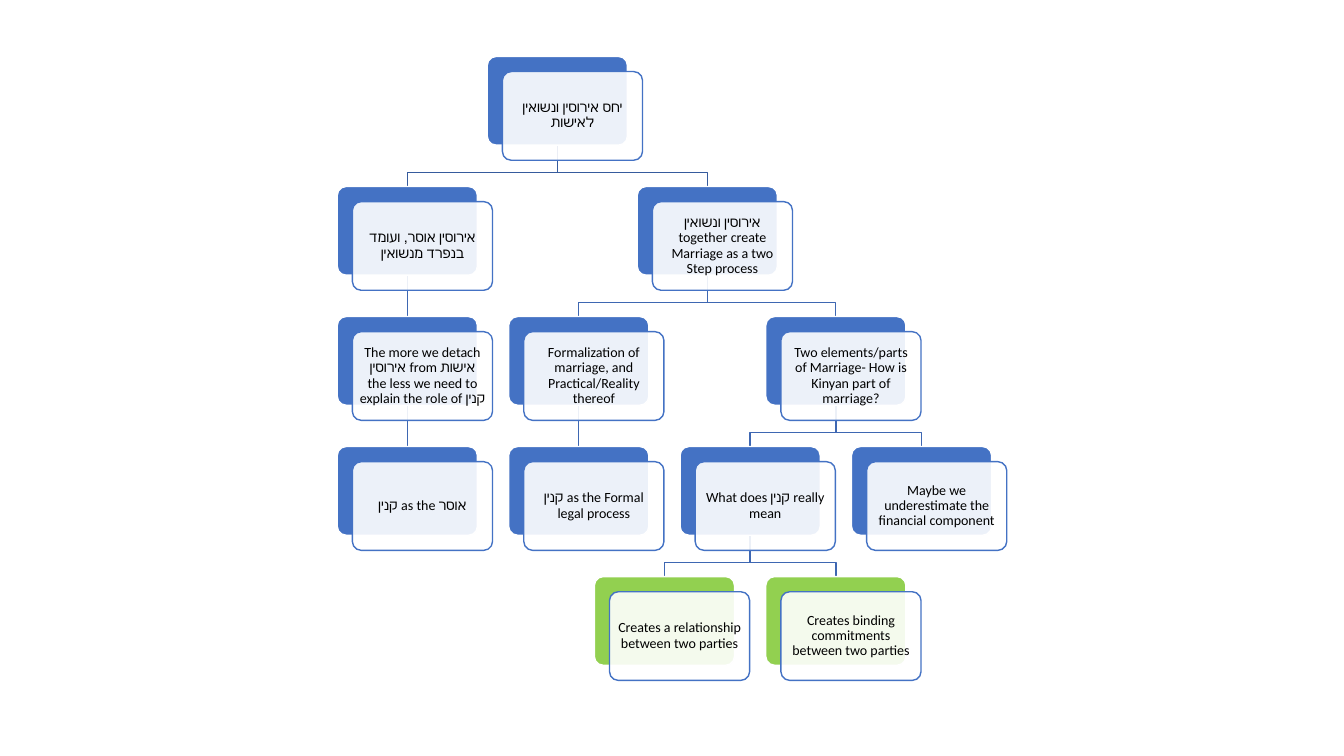
from lxml import etree
from pptx import Presentation
from pptx import util as u
from pptx.dml.color import RGBColor
from pptx.enum import shapes, text
from pptx.oxml.ns import qn

COLORS = {"blue": "4472C4", "green": "92D050", "white": "FFFFFF", "black": "000000",
          "root_line": "365B9D", "branch_line": "3E67B2"}

# key: (parent, column, level, back colour, wording)
NODES = {
    "root": (None, 0.875, 0, "blue", "יחס אירוסין ונשואין לאישות"),
    "separate": ("root", 0, 1, "blue", "אירוסין אוסר, ועומד בנפרד מנשואין"),
    "detach": ("separate", 0, 2, "blue",
               "The more we detach אירוסין from אישות the less we need to explain the role of קנין"),
    "forbids": ("detach", 0, 3, "blue", "קנין as the אוסר"),
    "together": ("root", 1.75, 1, "blue",
                 "אירוסין ונשואין together create Marriage as a two Step process"),
    "formal": ("together", 1, 2, "blue",
               "Formalization of marriage, and Practical/Reality thereof"),
    "legal": ("formal", 1, 3, "blue", "קנין as the Formal legal process"),
    "elements": ("together", 2.5, 2, "blue",
                 "Two elements/parts of Marriage- How is Kinyan part of marriage?"),
    "meaning": ("elements", 2, 3, "blue", "What does קנין really mean"),
    "relationship": ("meaning", 1.5, 4, "green", "Creates a relationship between two parties"),
    "commitments": ("meaning", 2.5, 4, "green",
                    "Creates binding commitments between two parties"),
    "financial": ("elements", 3, 3, "blue", "Maybe we underestimate the financial component"),
}

FIRST_CENTER, COLUMN_STEP = 4.04, 1.7
FIRST_TOP, LEVEL_STEP = 0.56, 1.29
WIDTH, HEIGHT = 1.39, 0.88
CARD_OFFSET = 0.15
ELBOW_DROP = 0.27


def rgb(name):
    return RGBColor.from_string(COLORS[name])


def place(key):
    """Horizontal centre and top of a node, in inches."""
    _, column, level, _, _ = NODES[key]
    return FIRST_CENTER + column * COLUMN_STEP, FIRST_TOP + level * LEVEL_STEP


def add_branch(page, parent, child):
    start_x, parent_top = place(parent)
    end_x, end_y = place(child)
    start_y = parent_top + HEIGHT
    if start_x == end_x:
        branch = page.shapes.add_connector(
            shapes.MSO_CONNECTOR.STRAIGHT, u.Inches(start_x), u.Inches(start_y),
            u.Inches(end_x), u.Inches(end_y))
        etree.SubElement(branch._element.spPr, qn("a:effectLst"))
    else:
        elbow_y = start_y + ELBOW_DROP
        builder = page.shapes.build_freeform(u.Inches(start_x), u.Inches(start_y))
        corners = [(start_x, elbow_y), (end_x, elbow_y), (end_x, end_y)]
        builder.add_line_segments([(u.Inches(x), u.Inches(y)) for x, y in corners], close=False)
        branch = builder.convert_to_shape()
        branch.fill.background()
        branch.shadow.inherit = False
    branch.line.color.rgb = rgb("root_line" if parent == "root" else "branch_line")
    branch.line.width = u.Pt(1)


def add_box(page, left, top, fill, line):
    box = page.shapes.add_shape(
        shapes.MSO_SHAPE.ROUNDED_RECTANGLE, u.Inches(left), u.Inches(top),
        u.Inches(WIDTH), u.Inches(HEIGHT))
    box.adjustments[0] = 0.1
    box.shadow.inherit = False
    box.fill.solid()
    box.fill.fore_color.rgb = rgb(fill)
    box.line.color.rgb = rgb(line)
    box.line.width = u.Pt(1)
    return box


def add_node(page, key):
    center, top = place(key)
    left = center - WIDTH / 2
    add_box(page, left, top, NODES[key][3], "white")
    card = add_box(page, left + CARD_OFFSET, top + CARD_OFFSET, "white", "blue")
    card_color = card._element.spPr.find(qn("a:solidFill"))[0]
    etree.SubElement(card_color, qn("a:alpha"), val="90000")

    frame = card.text_frame
    frame.word_wrap = True
    frame.vertical_anchor = text.MSO_ANCHOR.MIDDLE
    frame.margin_left = frame.margin_right = u.Inches(0.04)
    frame.margin_top = frame.margin_bottom = u.Inches(0.04)
    frame.text = NODES[key][4]
    para = frame.paragraphs[0]
    para.alignment = text.PP_ALIGN.CENTER
    para.line_spacing = 0.9
    span = para.runs[0]
    span.font.name = "Calibri"
    span.font.size = u.Pt(10)
    span.font.color.rgb = rgb("black")


def main():
    deck = Presentation()
    deck.slide_width, deck.slide_height = u.Inches(13.33), u.Inches(7.5)
    page = deck.slides.add_slide(deck.slide_layouts[6])

    # Branches lie behind the cards
    for key, node in NODES.items():
        if node[0]:
            add_branch(page, node[0], key)

    # Cards with their coloured backs
    for key in NODES:
        add_node(page, key)

    deck.save("out.pptx")


if __name__ == "__main__":
    main()
